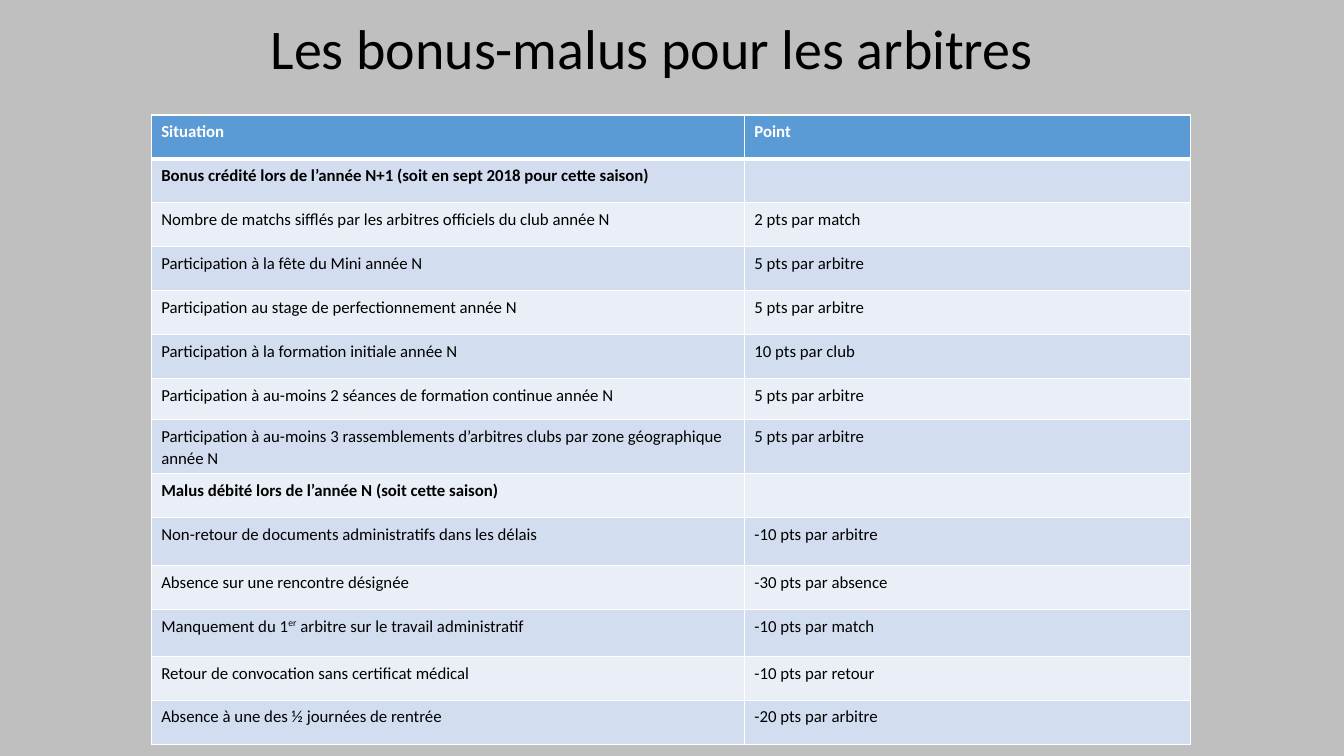
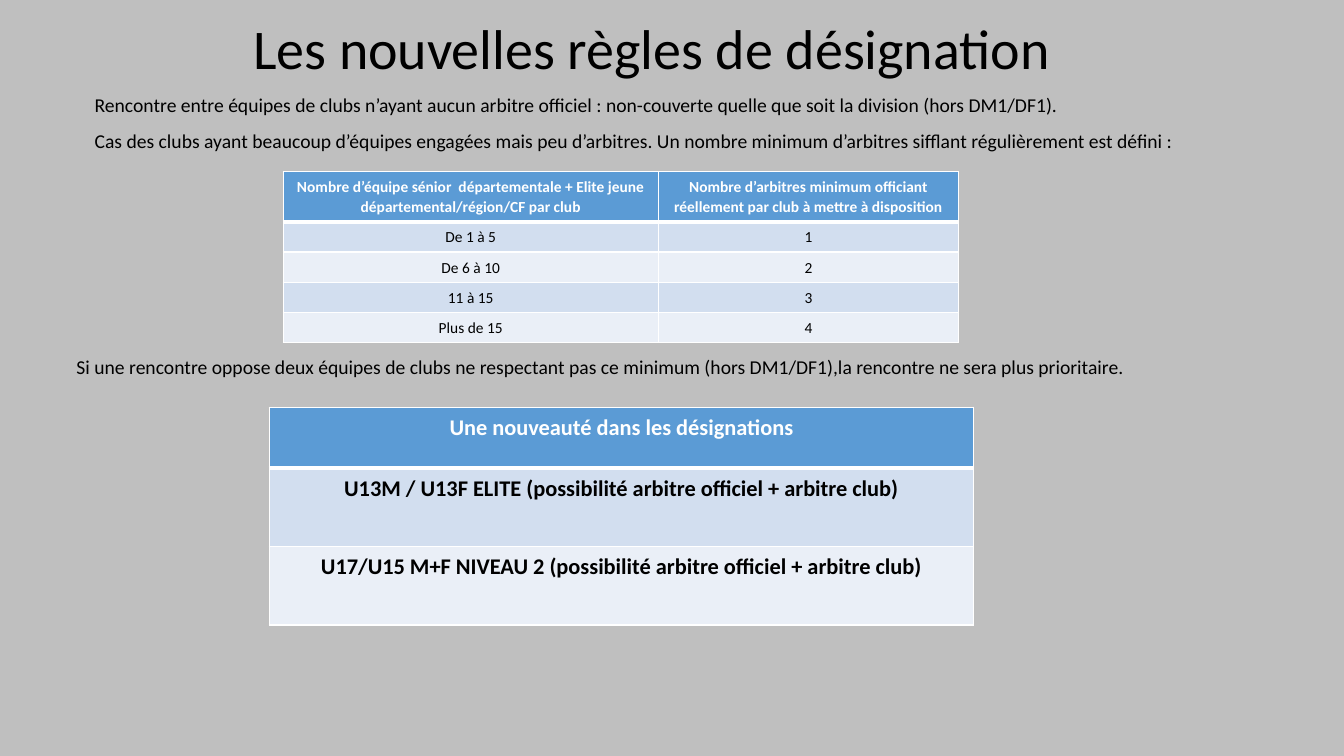
from dataclasses import dataclass

from lxml import etree
from pptx import Presentation
from pptx.dml.color import RGBColor
from pptx.enum.text import MSO_ANCHOR, MSO_AUTO_SIZE, PP_ALIGN
from pptx.oxml.ns import qn
from pptx.util import Inches, Pt

LEFT, CENTER, JUSTIFY = PP_ALIGN.LEFT, PP_ALIGN.CENTER, PP_ALIGN.JUSTIFY
TOP, MIDDLE = MSO_ANCHOR.TOP, MSO_ANCHOR.MIDDLE
NO_AUTOFIT = MSO_AUTO_SIZE.NONE

COLORS = {
    "background": "BFBFBF",
    "text": "000000",
    "header": "5B9BD5",
    "header_text": "FFFFFF",
    "border": "FFFFFF",
    "odd_band": "D2DEEF",
    "even_band": "EAEFF7",
}
FONT = "Calibri"
SLIDE_WIDTH, SLIDE_HEIGHT = Inches(13.33), Inches(7.5)
TITLE_ONLY = 5

BONUS_MALUS = [
    ("Situation", "Point"),
    ("Bonus crédité lors de l’année N+1 (soit en sept 2018 pour cette saison)", ""),
    ("Nombre de matchs sifflés par les arbitres officiels du club année N", "2 pts par match"),
    ("Participation à la fête du Mini année N", "5 pts par arbitre"),
    ("Participation au stage de perfectionnement année N", "5 pts par arbitre"),
    ("Participation à la formation initiale année N", "10 pts par club"),
    ("Participation à au-moins 2 séances de formation continue année N", "5 pts par arbitre"),
    ("Participation à au-moins 3 rassemblements d’arbitres clubs par zone géographique\nannée N",
     "5 pts par arbitre"),
    ("Malus débité lors de l’année N (soit cette saison)", ""),
    ("Non-retour de documents administratifs dans les délais", "-10 pts par arbitre"),
    ("Absence sur une rencontre désignée", "-30 pts par absence"),
    ("Manquement du 1^er^ arbitre sur le travail administratif", "-10 pts par match"),
    ("Retour de convocation sans certificat médical", "-10 pts par retour"),
    ("Absence à une des ½ journées de rentrée", "-20 pts par arbitre"),
]
MINIMUM_REFEREES = [
    ("Nombre d’équipe sénior  départementale + Elite jeune départemental/région/CF par club",
     "Nombre d’arbitres minimum officiant réellement par club à mettre à disposition"),
    ("De 1 à 5", "1"),
    ("De 6 à 10", "2"),
    ("11 à 15", "3"),
    ("Plus de 15", "4"),
]
NEW_DESIGNATIONS = [
    ("Une nouveauté dans les désignations",),
    ("U13M / U13F ELITE (possibilité arbitre officiel + arbitre club)",),
    ("U17/U15 M+F NIVEAU 2 (possibilité arbitre officiel + arbitre club)",),
]


@dataclass
class TableStyle:
    size: int
    align: int = LEFT
    anchor: int = TOP
    space_after: int = 0
    bold_rows: tuple = (0,)


def area(left, top, width, height):
    return (
        round(SLIDE_WIDTH * left / 100),
        round(SLIDE_HEIGHT * top / 100),
        round(SLIDE_WIDTH * width / 100),
        round(SLIDE_HEIGHT * height / 100),
    )


def rgb(name):
    return RGBColor.from_string(COLORS[name])


def add_run(paragraph, text, size, color="text", bold=False, superscript=False):
    run = paragraph.add_run()
    run.text = text
    run.font.name = FONT
    run.font.size = Pt(size)
    run.font.bold = bold
    run.font.color.rgb = rgb(color)
    if superscript:
        run.font._element.set("baseline", "30000")


def set_border(cell, side, width):
    line = etree.SubElement(cell._tc.get_or_add_tcPr(), qn(f"a:ln{side}"), w=str(Pt(width)))
    fill = etree.SubElement(line, qn("a:solidFill"))
    etree.SubElement(fill, qn("a:srgbClr"), val=COLORS["border"])


def fill_cell(cell, text, row, style):
    header_edge = {0: "B", 1: "T"}.get(row)
    for side in "LRTB":
        set_border(cell, side, 3 if side == header_edge else 1)
    band = "header" if row == 0 else "odd_band" if row % 2 else "even_band"
    cell.fill.solid()
    cell.fill.fore_color.rgb = rgb(band)
    cell.vertical_anchor = style.anchor
    color = "header_text" if row == 0 else "text"
    for number, line in enumerate(text.split("\n")):
        frame = cell.text_frame
        paragraph = frame.add_paragraph() if number else frame.paragraphs[0]
        paragraph.alignment = style.align
        paragraph.line_spacing = 1.07
        paragraph.space_after = Pt(style.space_after)
        for part, words in enumerate(line.split("^")):
            if words:
                add_run(paragraph, words, style.size, color, row in style.bold_rows, part % 2 == 1)


def add_styled_table(slide, box, rows, column_weights, row_weights, style):
    table = slide.shapes.add_table(len(rows), len(column_weights), *box).table
    for column, weight in zip(table.columns, column_weights):
        column.width = round(box[2] * weight / sum(column_weights))
    for row, weight in zip(table.rows, row_weights):
        row.height = round(box[3] * weight / sum(row_weights))
    for row_number, texts in enumerate(rows):
        for column_number, text in enumerate(texts):
            fill_cell(table.cell(row_number, column_number), text, row_number, style)


def add_statement(slide, box, text, align=JUSTIFY):
    frame = slide.shapes.add_textbox(*box).text_frame
    frame.word_wrap = True
    paragraph = frame.paragraphs[0]
    paragraph.alignment = align
    add_run(paragraph, text, 14)


def prepare_template(presentation):
    presentation.slide_width = SLIDE_WIDTH
    presentation.slide_height = SLIDE_HEIGHT
    background = presentation.slide_master.background.fill
    background.solid()
    background.fore_color.rgb = rgb("background")
    layout = presentation.slide_layouts[TITLE_ONLY]
    title = layout.placeholders[0]
    title.left, title.top, title.width, title.height = area(14.1, 1.07, 68.78, 10.27)
    return layout


def add_titled_slide(presentation, layout, text):
    slide = presentation.slides.add_slide(layout)
    frame = slide.shapes.title.text_frame
    frame.auto_size = NO_AUTOFIT
    frame.vertical_anchor = TOP
    paragraph = frame.paragraphs[0]
    paragraph.alignment = CENTER
    add_run(paragraph, text, 40)
    return slide


def build_bonus_slide(presentation, layout):
    slide = add_titled_slide(presentation, layout, "Les bonus-malus pour les arbitres")
    heights = [0.44] * len(BONUS_MALUS)
    heights[6], heights[7], heights[9], heights[11] = 0.41, 0.53, 0.48, 0.47
    add_styled_table(slide, area(11.25, 15.2, 77.33, 83.2), BONUS_MALUS, (5.89, 4.43), heights,
                     TableStyle(12, bold_rows=(0, 1, 8)))


def build_rules_slide(presentation, layout):
    slide = add_titled_slide(presentation, layout, "Les nouvelles règles de désignation")
    add_statement(slide, area(6.3, 11.6, 79.8, 4.53),
                  "Rencontre entre équipes de clubs n’ayant aucun arbitre officiel : "
                  "non-couverte quelle que soit la division (hors DM1/DF1).", LEFT)
    add_statement(slide, area(6.3, 16.4, 90.23, 4.53),
                  "Cas des clubs ayant beaucoup d’équipes engagées mais peu d’arbitres. "
                  "Un nombre minimum d’arbitres sifflant régulièrement est défini :")
    add_styled_table(slide, area(21.08, 22.67, 50.25, 22.67), MINIMUM_REFEREES,
                     (3.72, 2.98), (5, 3, 3, 3, 3), TableStyle(11, CENTER, MIDDLE, 8))
    add_statement(slide, area(4.95, 46.27, 80.18, 4.53),
                  "Si une rencontre oppose deux équipes de clubs ne respectant pas ce minimum "
                  "(hors DM1/DF1),la rencontre ne sera plus prioritaire.")
    add_styled_table(slide, area(20.03, 53.87, 52.43, 28.8), NEW_DESIGNATIONS,
                     (1,), (0.6, 0.78, 0.78), TableStyle(16, CENTER, TOP, 8, (0, 1, 2)))


def main():
    presentation = Presentation()
    layout = prepare_template(presentation)
    build_bonus_slide(presentation, layout)
    build_rules_slide(presentation, layout)
    presentation.save("out.pptx")


if __name__ == "__main__":
    main()
